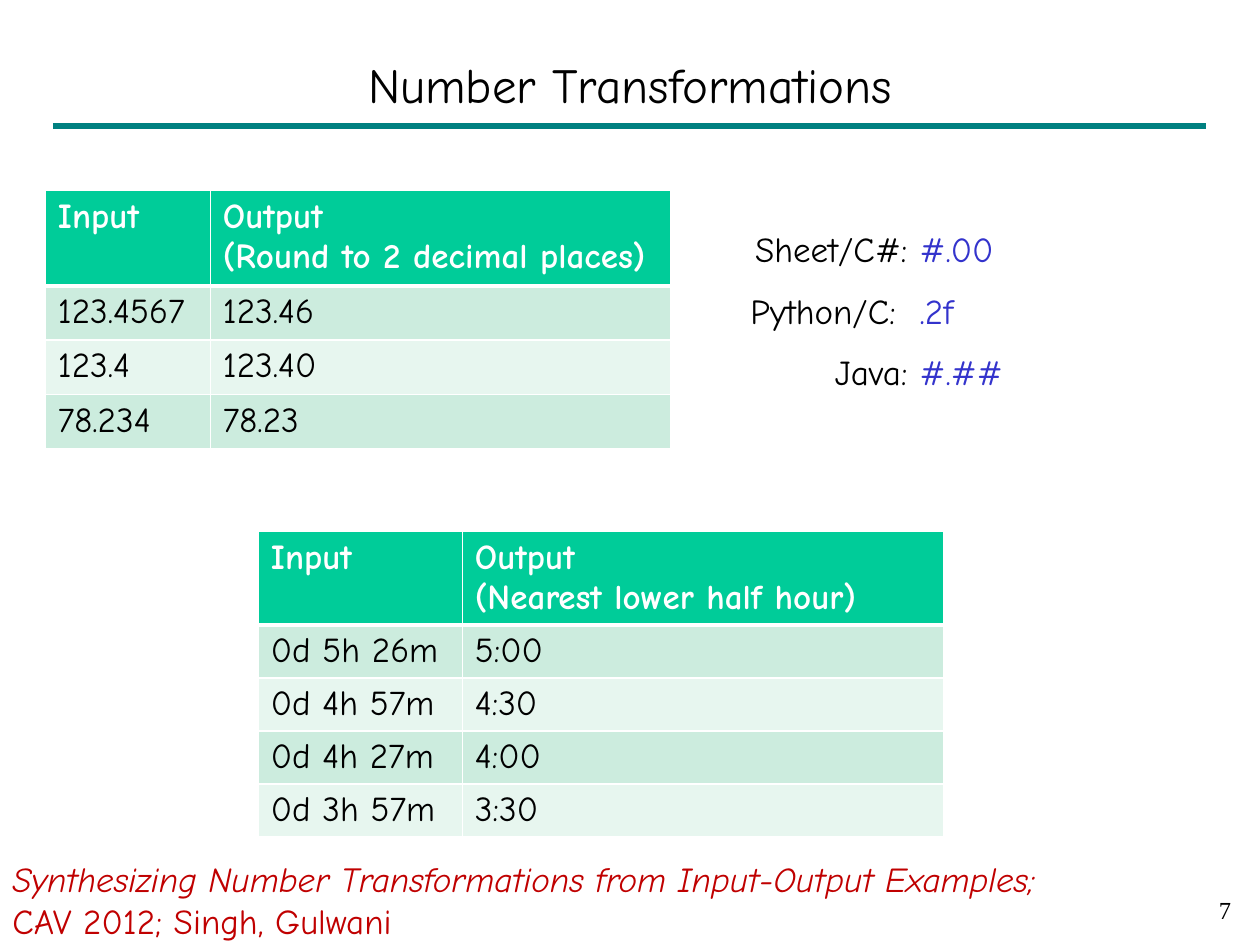
from pptx import Presentation
from pptx.dml.color import RGBColor
from pptx.enum import shapes, text
from pptx.oxml import parse_xml
from pptx.oxml.ns import nsdecls
from pptx.util import Inches, Pt

COLORS = {
    "text": "000000", "white": "FFFFFF", "rule": "008080", "header": "00CC99",
    "band": "CCECDE", "light": "E7F6EF", "code": "3333CC", "citation": "C00000",
}
FONT = "Comic Neue"
RIGHT = text.PP_ALIGN.RIGHT


def color(name):
    return RGBColor.from_string(COLORS[name])


def write(frame, lines, size=20, font=FONT, fill="text", bold=False,
          italics=(), align=None, before=0):
    """Write one paragraph per line; italics lists the italic line numbers."""
    for i, line in enumerate(lines):
        paragraph = frame.paragraphs[0] if i == 0 else frame.add_paragraph()
        paragraph.alignment = align
        paragraph.space_before = Pt(before)
        run = paragraph.add_run()
        run.text = line
        run.font.size, run.font.name = Pt(size), font
        run.font.bold, run.font.italic = bold, i in italics
        run.font.color.rgb = color(fill)


def add_borders(cell, bottom=1):
    """Draw white cell borders; they must precede the fill in the XML."""
    properties = cell._tc.get_or_add_tcPr()
    for side, width in (("L", 1), ("R", 1), ("T", 1), ("B", bottom)):
        properties.append(parse_xml(
            f'<a:ln{side} {nsdecls("a")} w="{Pt(width)}"><a:solidFill>'
            f'<a:srgbClr val="{COLORS["white"]}"/></a:solidFill></a:ln{side}>'))


class SlideBuilder:
    """Holds the current slide and draws its elements in one style."""

    def __init__(self, deck):
        self.slide = deck.slides.add_slide(deck.slide_layouts[5])

    def title(self, words, box):
        heading = self.slide.shapes.title
        heading.left, heading.top, heading.width, heading.height = map(Inches, box)
        heading.text_frame.vertical_anchor = text.MSO_ANCHOR.MIDDLE
        write(heading.text_frame, [words], size=28, align=text.PP_ALIGN.CENTER)

    def rule(self, left, right, y):
        line = self.slide.shapes.add_connector(
            shapes.MSO_CONNECTOR.STRAIGHT, *map(Inches, (left, y, right, y)))
        line.line.color.rgb = color("rule")
        line.line.width = Pt(4)
        line._element.spPr.append(parse_xml(f'<a:effectLst {nsdecls("a")}/>'))

    def text(self, lines, box, **style):
        frame = self.slide.shapes.add_textbox(*map(Inches, box)).text_frame
        frame.word_wrap = True
        write(frame, lines, **style)

    def table(self, rows, left, top, widths, header_height, row_height):
        heights = [header_height] + [row_height] * (len(rows) - 1)
        grid = self.slide.shapes.add_table(
            len(rows), len(widths),
            *map(Inches, (left, top, sum(widths), sum(heights)))).table
        for column, width in zip(grid.columns, widths):
            column.width = Inches(width)
        for r, (row, height) in enumerate(zip(rows, heights)):
            grid.rows[r].height = Inches(height)
            is_header = r == 0
            for c, words in enumerate(row):
                cell = grid.cell(r, c)
                add_borders(cell, bottom=3 if is_header else 1)
                cell.fill.solid()
                cell.fill.fore_color.rgb = color(
                    "header" if is_header else "band" if r % 2 else "light")
                write(cell.text_frame, words.split("\n"), bold=is_header,
                      fill="white" if is_header else "text")


def main():
    deck = Presentation()
    deck.slide_width, deck.slide_height = Inches(10), Inches(7.5)
    page = SlideBuilder(deck)

    page.rule(0.42, 9.57, 1)
    page.title("Number Transformations", (0.75, 0.33, 8.5, 0.67))

    half_hours = [
        ("Input", "Output\n(Nearest lower half hour)"),
        ("0d 5h 26m", "5:00"),
        ("0d 4h 57m", "4:30"),
        ("0d 4h 27m", "4:00"),
        ("0d 3h 57m", "3:30"),
    ]
    page.table(half_hours, 2.05, 4.22, (1.62, 3.82), 0.73, 0.42)

    rounding = [
        ("Input", "Output\n(Round to 2 decimal places)"),
        ("123.4567", "123.46"),
        ("123.4", "123.40"),
        ("78.234", "78.23"),
    ]
    page.table(rounding, 0.36, 1.51, (1.31, 3.65), 0.76, 0.43)

    languages = ["Sheet/C#:", "Python/C: ", "Java:"]
    formats = ["#.00", ".2f", "#.##"]
    page.text(languages, (5.72, 1.76, 1.58, 1.45), align=RIGHT, before=11)
    page.text(formats, (7.2, 1.76, 1.15, 1.45), fill="code", before=11)

    citation = ["Synthesizing Number Transformations from Input-Output Examples;",
                "CAV 2012; Singh, Gulwani"]
    page.text(citation, (0, 6.76, 9.87, 0.77), fill="citation", italics=(0,))
    page.text(["7"], (7.79, 7.05, 2.08, 0.42), size=14,
              font="Times New Roman", align=RIGHT)

    deck.save("out.pptx")


if __name__ == "__main__":
    main()
